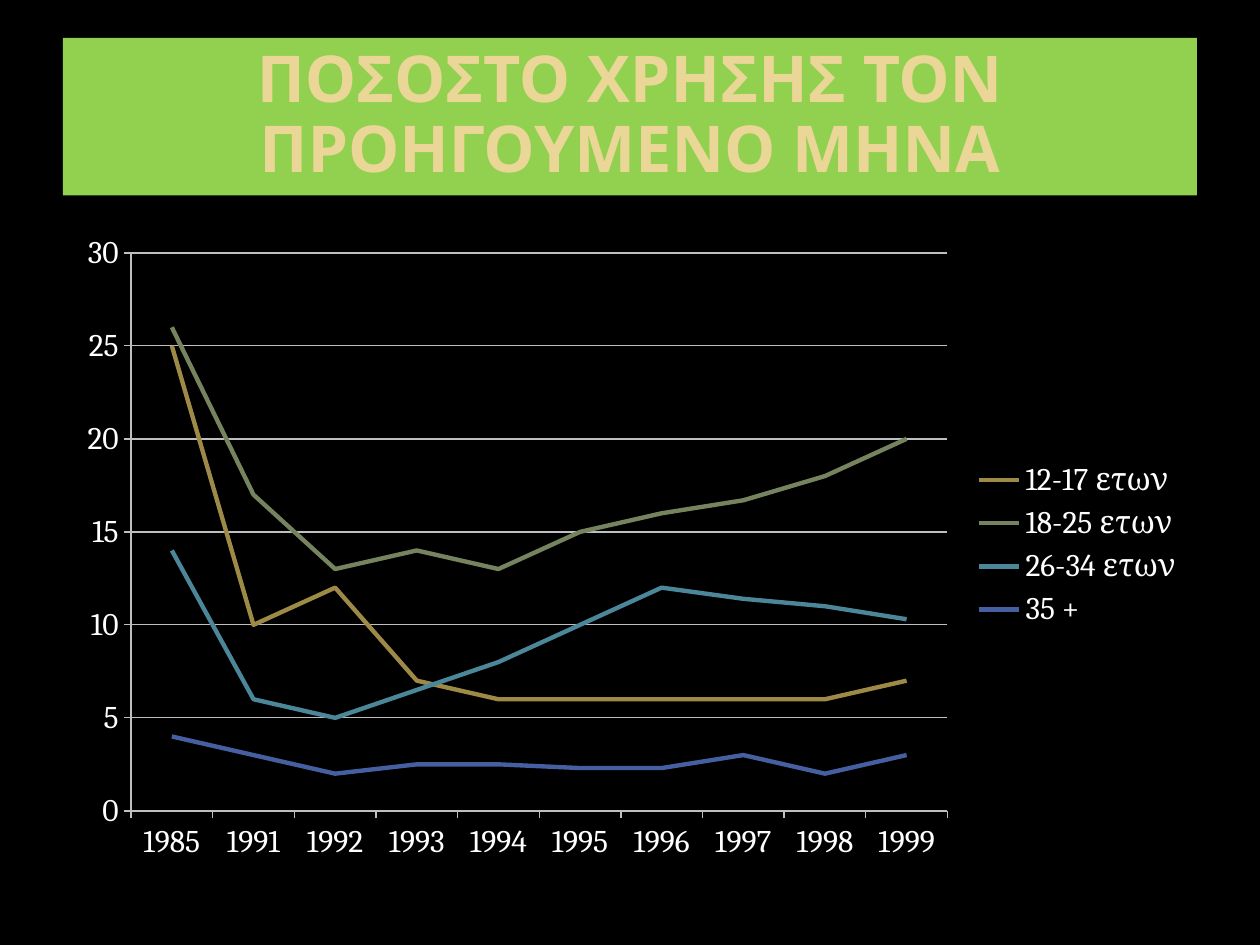
"""Build a slide with a line chart of last-month use by age group."""
from dataclasses import dataclass

from lxml.etree import SubElement
from pptx import Presentation
from pptx.chart.data import CategoryChartData
from pptx.dml.color import RGBColor
from pptx.enum.chart import XL_CHART_TYPE, XL_LEGEND_POSITION, XL_TICK_MARK
from pptx.enum.text import MSO_ANCHOR, PP_ALIGN
from pptx.oxml.ns import qn
from pptx.util import Inches, Pt


@dataclass(frozen=True)
class Theme:
    back: str = "000000"
    band: str = "92D050"
    title: str = "EAD696"
    text: str = "FFFFFF"
    grid: str = "BFBFBF"
    lines: tuple = ("9C8A46", "75845F", "4B8699", "465FA0")
    head: str = "Open Sans"
    body: str = "Cambria"
    big: float = 36.9
    small: float = 18
    thick: float = 2.5
    thin: float = 0.75


YEARS = ["1985", *map(str, range(1991, 2000))]
GROUPS = {
    "12-17 ετων": [25, 10, 12, 7, 6, 6, 6, 6, 6, 7],
    "18-25 ετων": [26, 17, 13, 14, 13, 15, 16, 16.7, 18, 20],
    "26-34 ετων": [14, 6, 5, 6.5, 8, 10, 12, 11.4, 11, 10.3],
    "35 +": [4, 3, 2, 2.5, 2.5, 2.3, 2.3, 3, 2, 3],
}


def style(font, face, size, color, bold=False):
    font.name, font.size, font.bold = face, Pt(size), bold
    font.color.rgb = RGBColor.from_string(color)


def write(frame, text, align=PP_ALIGN.CENTER, space=0.9, **form):
    frame.word_wrap = True
    frame.vertical_anchor = MSO_ANCHOR.MIDDLE
    par = frame.paragraphs[0]
    par.alignment, par.line_spacing = align, space
    run = par.add_run()
    run.text = text
    style(run.font, **form)


def stroke(line, color, width):
    line.color.rgb = RGBColor.from_string(color)
    line.width = Pt(width)


class Deck:
    """Hold the theme and the current slide, on a 20 by 150 grid."""

    cols, rows = 20, 150

    def __init__(self, theme):
        self.theme = theme
        self.show = Presentation()
        self.show.slide_width, self.show.slide_height = Inches(10), Inches(7.5)
        self.page = self.show.slides.add_slide(self.show.slide_layouts[6])
        fill = self.page.background.fill
        fill.solid()
        fill.fore_color.rgb = RGBColor.from_string(theme.back)

    def place(self, col, row, wide, high):
        dx = self.show.slide_width / self.cols
        dy = self.show.slide_height / self.rows
        return [round(v) for v in (col * dx, row * dy, wide * dx, high * dy)]

    def title(self, text, *area):
        box = self.page.shapes.add_textbox(*self.place(*area))
        box.fill.solid()
        box.fill.fore_color.rgb = RGBColor.from_string(self.theme.band)
        write(box.text_frame, text, face=self.theme.head, size=self.theme.big,
              color=self.theme.title, bold=True)

    def chart(self, cats, groups, *area, plot):
        data = CategoryChartData()
        data.categories = cats
        for name, vals in groups.items():
            data.add_series(name, vals)
        chart = self.page.shapes.add_chart(
            XL_CHART_TYPE.LINE, *self.place(*area), data).chart
        look = self.theme
        style(chart.font, look.body, look.small, look.text)
        chart.has_title = False
        chart.has_legend = True
        chart.legend.position = XL_LEGEND_POSITION.RIGHT
        chart.legend.include_in_layout = False
        chart.plots[0].vary_by_categories = False
        for line, color in zip(chart.plots[0].series, look.lines):
            line.smooth = False
            stroke(line.format.line, color, look.thick)
        for axis in (chart.category_axis, chart.value_axis):
            axis.major_tick_mark = XL_TICK_MARK.OUTSIDE
            axis.minor_tick_mark = XL_TICK_MARK.NONE
            stroke(axis.format.line, look.grid, look.thin)
        axis = chart.value_axis
        axis.minimum_scale, axis.maximum_scale, axis.major_unit = 0, 30, 5
        stroke(axis.major_gridlines.format.line, look.grid, look.thin)
        self.inset(chart, plot)

    def inset(self, chart, plot):
        zone = chart.plots[0]._element.getparent()
        for old in zone.findall(qn("c:layout")):
            zone.remove(old)
        lay = SubElement(zone, qn("c:layout"))
        zone.insert(0, lay)
        man = SubElement(lay, qn("c:manualLayout"))
        parts = [("layoutTarget", "inner"), ("xMode", "edge"), ("yMode", "edge")]
        for tag, val in parts + list(zip("xywh", plot)):
            SubElement(man, qn("c:" + tag)).set("val", str(val))


def main():
    deck = Deck(Theme())
    deck.title("ΠΟΣΟΣΤΟ ΧΡΗΣΗΣ ΤΟΝ ΠΡΟΗΓΟΥΜΕΝΟ ΜΗΝΑ", 1, 6, 18, 25)
    deck.chart(YEARS, GROUPS, 1, 35, 18, 103, plot=(0.06, 0.05, 0.72, 0.86))
    deck.show.save("out.pptx")


if __name__ == "__main__":
    main()
